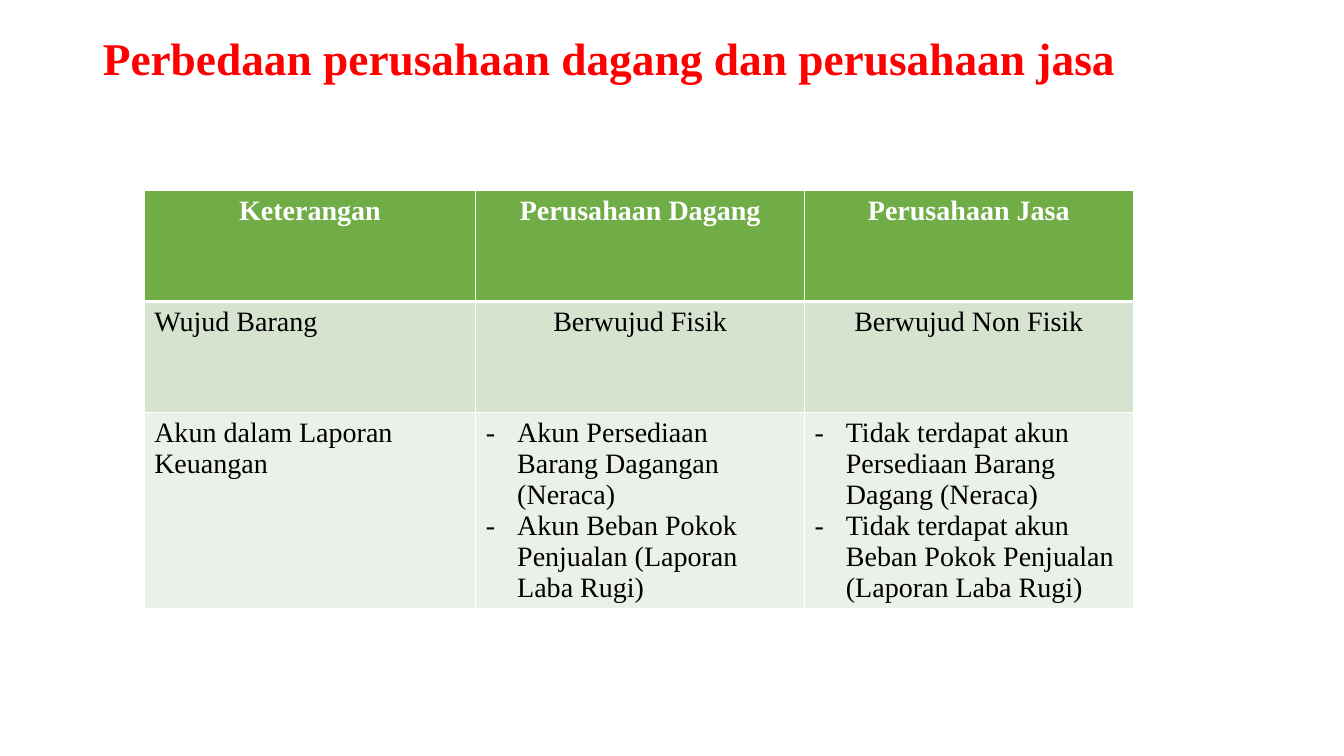
from dataclasses import dataclass

from lxml.etree import SubElement
from pptx import Presentation
from pptx.dml.color import RGBColor
from pptx.enum.text import MSO_ANCHOR as Anchor, MSO_AUTO_SIZE as AutoSize, PP_ALIGN as Align
from pptx.oxml import parse_xml
from pptx.oxml.ns import nsdecls, qn
from pptx.util import Inches, Pt


@dataclass(frozen=True)
class Theme:
    font: str = "Times New Roman"
    title_size: float = 32.4
    table_size: float = 20
    title_color: str = "FF0000"
    header_text: str = "FFFFFF"
    body_text: str = "000000"
    border: str = "FFFFFF"
    row_fills: tuple = ("70AD47", "D5E3CF", "EBF1E9")


class ComparisonSlide:
    def __init__(self, deck, theme):
        self.theme = theme
        self.slide = deck.slides.add_slide(deck.slide_layouts[5])

    def style(self, paragraph, size, color, bold=False):
        for run in paragraph.runs:
            run.font.name = self.theme.font
            run.font.size = Pt(size)
            run.font.bold = bold
            run.font.color.rgb = RGBColor.from_string(color)

    def title(self, text, left, top, width, height):
        heading = self.slide.shapes.title
        heading.left, heading.top = Inches(left), Inches(top)
        heading.width, heading.height = Inches(width), Inches(height)
        frame = heading.text_frame
        frame.text = text
        frame.word_wrap = True
        frame.auto_size = AutoSize.NONE
        frame.vertical_anchor = Anchor.MIDDLE
        paragraph = frame.paragraphs[0]
        paragraph.alignment = Align.LEFT
        paragraph.line_spacing = 0.9
        self.style(paragraph, self.theme.title_size, self.theme.title_color, True)

    def dash(self, paragraph):
        properties = paragraph._p.get_or_add_pPr()
        properties.set("marL", str(Inches(0.31)))
        properties.set("indent", str(Inches(-0.31)))
        SubElement(properties, qn("a:buFont"), typeface=self.theme.font)
        SubElement(properties, qn("a:buChar"), char="-")

    def borders(self, cell, top, bottom):
        properties = cell._tc.get_or_add_tcPr()
        widths = {"lnL": 1, "lnR": 1, "lnT": top, "lnB": bottom}
        for position, (side, width) in enumerate(widths.items()):
            properties.insert(position, parse_xml(
                f'<a:{side} {nsdecls("a")} w="{Pt(width)}"><a:solidFill>'
                f'<a:srgbClr val="{self.theme.border}"/></a:solidFill></a:{side}>'))

    def cell(self, cell, content, row, column):
        is_header = row == 0
        is_list = isinstance(content, list)
        cell.fill.solid()
        cell.fill.fore_color.rgb = RGBColor.from_string(self.theme.row_fills[row])
        self.borders(cell, top=3 if row == 1 else 1, bottom=3 if is_header else 1)
        cell.text_frame.text = "\n".join(content) if is_list else content
        centered = is_header or (column > 0 and not is_list)
        color = self.theme.header_text if is_header else self.theme.body_text
        for paragraph in cell.text_frame.paragraphs:
            paragraph.alignment = Align.CENTER if centered else Align.LEFT
            if is_list:
                self.dash(paragraph)
            self.style(paragraph, self.theme.table_size, color, is_header)

    def table(self, rows, left, top, column_widths, row_height):
        table = self.slide.shapes.add_table(
            len(rows), len(column_widths), Inches(left), Inches(top),
            Inches(sum(column_widths)), Inches(row_height * len(rows))).table
        for column, width in zip(table.columns, column_widths):
            column.width = Inches(width)
        for r, contents in enumerate(rows):
            for c, content in enumerate(contents):
                self.cell(table.cell(r, c), content, r, c)


def main():
    deck = Presentation()
    deck.slide_width, deck.slide_height = Inches(13.33), Inches(7.5)
    comparison = ComparisonSlide(deck, Theme())

    # Heading, ending in a line break
    comparison.title("Perbedaan perusahaan dagang dan perusahaan jasa\v",
                     0.92, 0.74, 11.25, 0.45)

    # Trading companies against service companies
    differences = [
        ["Keterangan", "Perusahaan Dagang", "Perusahaan Jasa"],
        ["Wujud Barang", "Berwujud Fisik", "Berwujud Non Fisik"],
        ["Akun dalam Laporan Keuangan",
         ["Akun Persediaan Barang Dagangan (Neraca)",
          "Akun Beban Pokok Penjualan (Laporan Laba Rugi)"],
         ["Tidak terdapat akun Persediaan Barang Dagang (Neraca)",
          "Tidak terdapat akun Beban Pokok Penjualan (Laporan Laba Rugi)"]],
    ]
    comparison.table(differences, 1.43, 1.89, [3.29, 3.26, 3.26], 1.1)

    deck.save("out.pptx")


if __name__ == "__main__":
    main()
